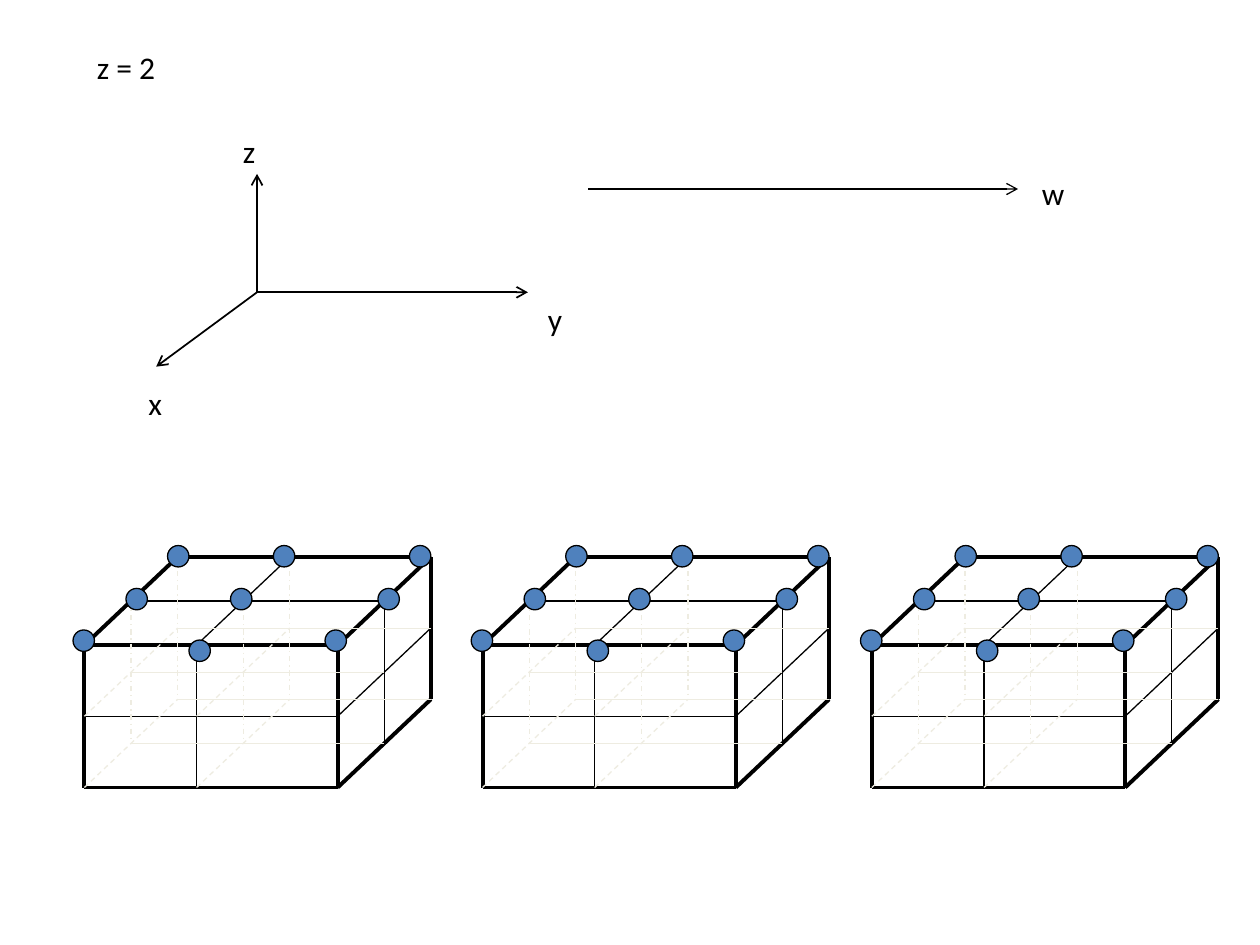
from itertools import product
from lxml import etree
from pptx import Presentation
from pptx import util as u
from pptx.dml.color import RGBColor
from pptx.enum import dml, shapes, text
from pptx.oxml.ns import qn

INK, PALE, BLUE = "000000", "EEECE1", "4F81BD"
DASH = dml.MSO_LINE


def paint(hue):
    return RGBColor.from_string(hue)


def add_line(host, start, end, hue=INK, width=0.75, dash=None, arrow=False):
    ends = [u.Inches(v) for v in (*start, *end)]
    line = host.shapes.add_connector(shapes.MSO_CONNECTOR.STRAIGHT, *ends)
    line.line.color.rgb = paint(hue)
    line.line.width = u.Pt(width)
    if dash:
        line.line.dash_style = dash
    if arrow:
        etree.SubElement(line.line._get_or_add_ln(), qn("a:tailEnd"), type="arrow")
    etree.SubElement(line._element.spPr, qn("a:effectLst"))


def add_label(slide, words, left, top, width):
    box = slide.shapes.add_textbox(*(u.Inches(v) for v in (left, top, width, 0.4)))
    frame = box.text_frame
    frame.word_wrap = True
    frame.auto_size = text.MSO_AUTO_SIZE.SHAPE_TO_FIT_TEXT
    para = frame.paragraphs[0]
    para.text = words
    para.font.name, para.font.size = "Calibri", u.Pt(18)
    para.font.color.rgb = paint(INK)


def add_dot(host, left, top):
    size = u.Inches(0.17)
    dot = host.shapes.add_shape(
        shapes.MSO_SHAPE.OVAL, u.Inches(left), u.Inches(top), size, size)
    dot.shadow.inherit = False
    dot.fill.solid()
    dot.fill.fore_color.rgb = paint(BLUE)
    dot.line.color.rgb = paint(INK)
    dot.line.width = u.Pt(0.75)


def add_axes(slide, left, top):
    """Axes x, y and z from a shared origin, and w apart from them."""
    root = (left + 0.8, top + 0.94)
    for end in ((left + 0.8, top), (left, top + 1.53), (left + 2.95, top + 0.94)):
        add_line(slide, root, end, width=1, arrow=True)
    add_line(slide, (left + 3.43, top + 0.12), (left + 6.84, top + 0.12), arrow=True)
    for name, dx, dy, width in (("w", 6.93, -0.05, 0.5), ("x", -0.16, 1.62, 0.5),
                                ("y", 3.01, 0.95, 0.33), ("z", 0.59, -0.38, 0.33)):
        add_label(slide, name, left + dx, top + dy, width)


def add_cube(slide, left, top, width=2.75, height=1.83):
    """A 2 x 2 x 2 block of cells, with dots on its top layer."""
    group = slide.shapes.add_group_shape()
    slant, rise = 0.74, 0.7
    face = width - slant
    cols = (0, 0.89, face)

    def spot(col, row, deep):  # row 0 is the top, deep 0 the front
        return (left + cols[col] + slant * deep / 2,
                top + rise * (1 - deep / 2) + (height - rise) * row / 2)

    # Grid lines: each runs along one axis at a fixed place on the other two
    seen, hidden = [], []
    for a, b in product(range(3), repeat=2):
        runs = (
            ((0, a, b), (2, a, b), a == 0 or b == 0, None),
            ((a, 0, b), (a, 2, b), a == 2 or b == 0, DASH.DASH_DOT),
            ((a, b, 0), (a, b, 2), a == 2 or b == 0, DASH.DASH),
        )
        for start, end, front, dash in runs:
            ends = spot(*start), spot(*end)
            if front:
                edge = a != 1 and b != 1
                seen.append((*ends, INK, 2.25 if edge else 0.75))
            else:
                fine = start == (0, 1, 2)
                hidden.append((*ends, PALE, 0.25 if fine else 0.75, dash))
    for line in seen + hidden:
        add_line(group, *line)

    # Dots: back, middle and front rows, by their top left corners
    for dx, dy in ((0.66, -0.09), (1.5, -0.09), (2.58, -0.09),
                   (0.33, 0.25), (1.16, 0.25), (2.33, 0.25),
                   (-0.09, 0.58), (0.83, 0.66), (1.91, 0.58)):
        add_dot(group, left + dx, top + dy)


def main():
    deck = Presentation()
    deck.slide_width, deck.slide_height = u.Inches(10), u.Inches(7.5)
    slide = deck.slides.add_slide(deck.slide_layouts[6])
    add_axes(slide, 1.24, 1.38)
    add_label(slide, "z = 2", 0.67, 0.33, 4.5)
    for left in (0.67, 3.83, 6.92):
        add_cube(slide, left, 4.42)
    deck.save("out.pptx")


if __name__ == "__main__":
    main()
